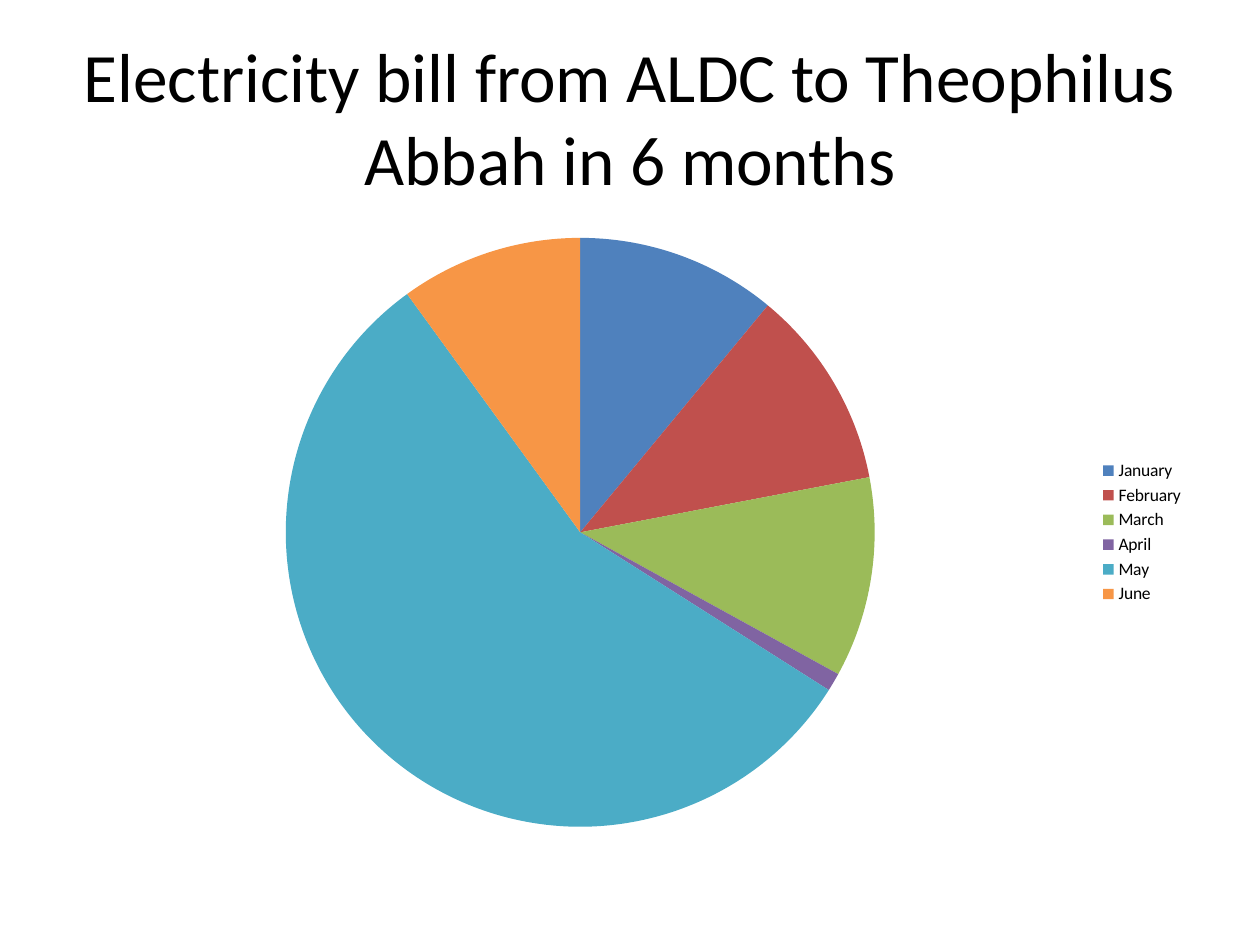
from pptx import Presentation
from pptx.chart.data import CategoryChartData
from pptx.dml.color import RGBColor
from pptx.enum.chart import XL_CHART_TYPE, XL_LEGEND_POSITION
from pptx.enum.text import MSO_ANCHOR, MSO_AUTO_SIZE, PP_ALIGN
from pptx.util import Inches, Pt

FONT = "Calibri"
COLORS = {
    "text": "000000",
    "January": "4F81BD",
    "February": "C0504D",
    "March": "9BBB59",
    "April ": "8064A2",
    "May": "4BACC6",
    "June": "F79646",
}
BILL_SHARES = {
    "January": 11,
    "February": 11,
    "March": 11,
    "April ": 1,
    "May": 56,
    "June": 10,
}


def color(name):
    return RGBColor.from_string(COLORS[name])


def format_font(font, size):
    font.name = FONT
    font.size = Pt(size)
    font.color.rgb = color("text")


def write_text(frame, text, size=18, align=PP_ALIGN.LEFT, anchor=MSO_ANCHOR.TOP):
    frame.word_wrap = True
    frame.auto_size = MSO_AUTO_SIZE.NONE
    frame.vertical_anchor = anchor
    paragraph = frame.paragraphs[0]
    paragraph.alignment = align
    run = paragraph.add_run()
    run.text = text
    format_font(run.font, size)


def place_title(slide, left, top, width, height):
    title = slide.shapes.title
    title.left, title.top, title.width, title.height = left, top, width, height
    write_text(
        title.text_frame,
        "Electricity bill from ALDC to Theophilus Abbah in 6 months",
        size=39.6,
        align=PP_ALIGN.CENTER,
        anchor=MSO_ANCHOR.MIDDLE,
    )


def place_bill_chart(slide, left, top, width, height):
    bills = CategoryChartData()
    bills.categories = list(BILL_SHARES)
    bills.add_series("Series 1", list(BILL_SHARES.values()))
    chart = slide.shapes.add_chart(
        XL_CHART_TYPE.PIE, left, top, width, height, bills
    ).chart
    chart.has_title = False
    format_font(chart.font, 10)

    chart.has_legend = True
    chart.legend.position = XL_LEGEND_POSITION.RIGHT
    chart.legend.include_in_layout = False

    pie = chart.plots[0]
    pie.vary_by_categories = True
    for index, month in enumerate(BILL_SHARES):
        fill = pie.series[0].points[index].format.fill
        fill.solid()
        fill.fore_color.rgb = color(month)


def main():
    presentation = Presentation()
    presentation.slide_width = Inches(10)
    presentation.slide_height = Inches(7.5)
    slide = presentation.slides.add_slide(presentation.slide_layouts[5])
    place_title(slide, Inches(0.5), Inches(0.3), Inches(9), Inches(1.25))
    place_bill_chart(slide, Inches(0.5), Inches(1.75), Inches(9), Inches(4.95))
    presentation.save("out.pptx")


if __name__ == "__main__":
    main()
